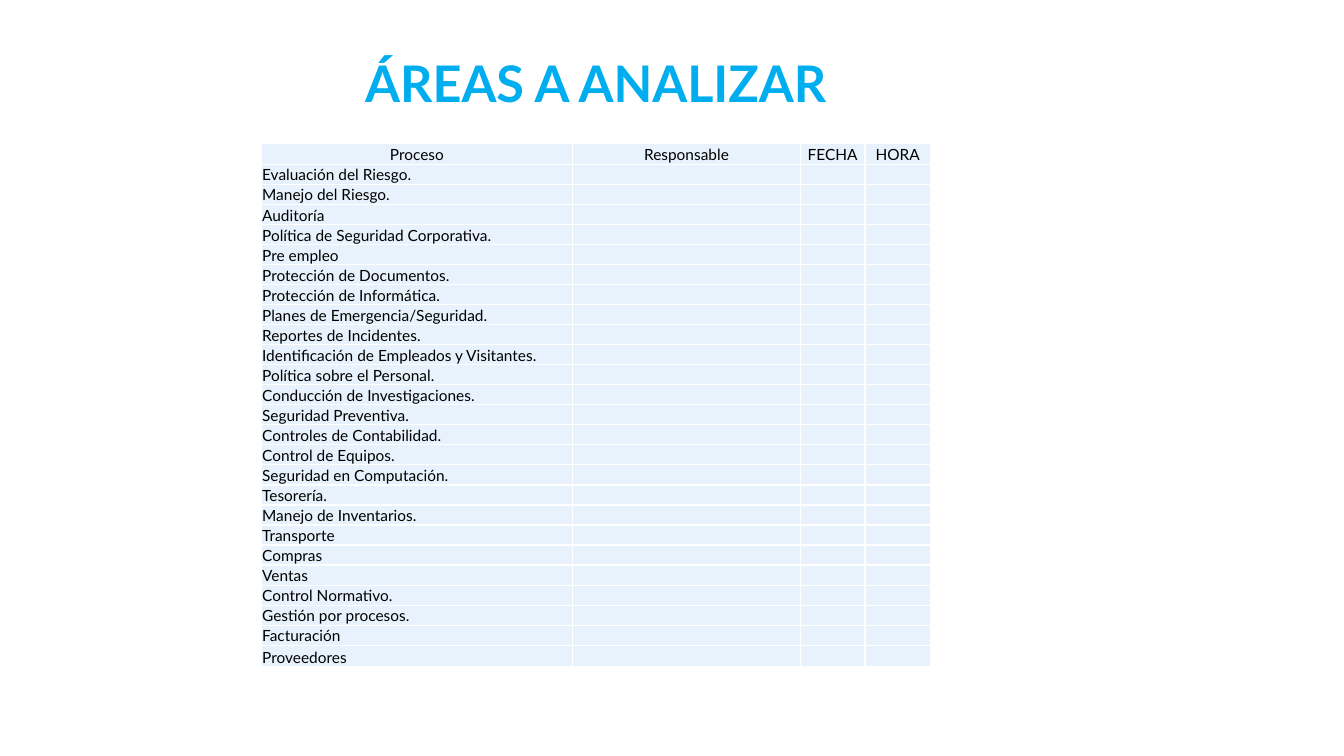
from lxml.etree import SubElement
from pptx import Presentation
from pptx.dml.color import RGBColor
from pptx.enum.text import MSO_ANCHOR, MSO_AUTO_SIZE, PP_ALIGN
from pptx.oxml.ns import qn
from pptx.util import Inches, Pt

SLIDE_WIDTH, SLIDE_HEIGHT = Inches(13.33), Inches(7.5)
TYPEFACE = "Lato"
BODY_SIZE = 11
COLUMN_SHARES = [23.18, 16.95, 4.8, 4.88]
EDGE_ROW_SHARE, INNER_ROW_SHARE = 2.8, 2.64
HEADINGS = ["Proceso", "Responsable", "FECHA", "HORA"]
PROCESSES = [
    "Evaluación del Riesgo.",
    "Manejo del Riesgo.",
    "Auditoría",
    "Política de Seguridad Corporativa.",
    "Pre empleo",
    "Protección de Documentos.",
    "Protección de Informática.",
    "Planes de Emergencia/Seguridad.",
    "Reportes de Incidentes.",
    "Identificación de Empleados y Visitantes.",
    "Política sobre el Personal.",
    "Conducción de Investigaciones.",
    "Seguridad Preventiva.",
    "Controles de Contabilidad.",
    "Control de Equipos.",
    "Seguridad en Computación.",
    "Tesorería.",
    "Manejo de Inventarios.",
    "Transporte",
    "Compras",
    "Ventas",
    "Control Normativo.",
    "Gestión por procesos.",
    "Facturación",
    "Proveedores",
]


def across(percent):
    return round(SLIDE_WIDTH * percent / 100)


def down(percent):
    return round(SLIDE_HEIGHT * percent / 100)


def paint(color_format, hex_color):
    color_format.rgb = RGBColor.from_string(hex_color)


def apply(target, values):
    for attribute, value in values.items():
        setattr(target, attribute, value)


def write(paragraph, wording, size, hex_color, bold, alignment):
    run = paragraph.add_run()
    run.text = wording
    apply(run.font, {"name": TYPEFACE, "size": Pt(size), "bold": bold})
    paint(run.font.color, hex_color)
    paragraph.alignment = alignment


def add_title(slide, wording):
    title = slide.shapes.title
    apply(title, {"left": across(8.7), "top": down(7.73),
                  "width": across(71.27), "height": down(7.73)})
    apply(title.text_frame, {"word_wrap": True, "auto_size": MSO_AUTO_SIZE.NONE,
                             "vertical_anchor": MSO_ANCHOR.BOTTOM})
    heading = title.text_frame.paragraphs[0]
    heading.line_spacing = 0.8
    write(heading, wording, 36, "00AEEF", True, PP_ALIGN.CENTER)


def add_borders(cell, hex_color, width):
    properties = cell._tc.get_or_add_tcPr()
    for position, side in enumerate(["a:lnL", "a:lnR", "a:lnT", "a:lnB"]):
        border = SubElement(properties, qn(side), w=str(Pt(width)))
        fill = SubElement(border, qn("a:solidFill"))
        SubElement(fill, qn("a:srgbClr"), val=hex_color)
        properties.insert(position, border)


def fill_cell(cell, wording, alignment):
    apply(cell, {"margin_left": Inches(0.01), "margin_right": Inches(0.01),
                 "margin_top": Inches(0.01), "margin_bottom": 0,
                 "vertical_anchor": MSO_ANCHOR.BOTTOM})
    cell.fill.solid()
    paint(cell.fill.fore_color, "E7F2FC")
    add_borders(cell, "FFFFFF", 1)
    paragraph = cell.text_frame.paragraphs[0]
    if wording:
        write(paragraph, wording, BODY_SIZE, "000000", False, alignment)
    else:
        SubElement(paragraph._p, qn("a:endParaRPr"), sz=str(BODY_SIZE * 100))


def add_process_table(slide):
    entries = [HEADINGS] + [[process, "", "", ""] for process in PROCESSES]
    row_shares = [EDGE_ROW_SHARE, *[INNER_ROW_SHARE] * (len(entries) - 2), EDGE_ROW_SHARE]
    schedule = slide.shapes.add_table(
        len(entries), len(HEADINGS), across(19.43), down(18.93),
        across(sum(COLUMN_SHARES)), down(sum(row_shares))).table
    apply(schedule, {"first_row": False, "horz_banding": False})
    for column, share in zip(schedule.columns, COLUMN_SHARES):
        column.width = across(share)
    for row_number, (row, share) in enumerate(zip(schedule.rows, row_shares)):
        row.height = down(share)
        alignment = PP_ALIGN.LEFT if row_number else PP_ALIGN.CENTER
        for cell, wording in zip(row.cells, entries[row_number]):
            fill_cell(cell, wording, alignment)


def main():
    presentation = Presentation()
    apply(presentation, {"slide_width": SLIDE_WIDTH, "slide_height": SLIDE_HEIGHT})
    slide = presentation.slides.add_slide(presentation.slide_layouts[5])
    add_title(slide, "ÁREAS A ANALIZAR")
    add_process_table(slide)
    presentation.save("out.pptx")


if __name__ == "__main__":
    main()
